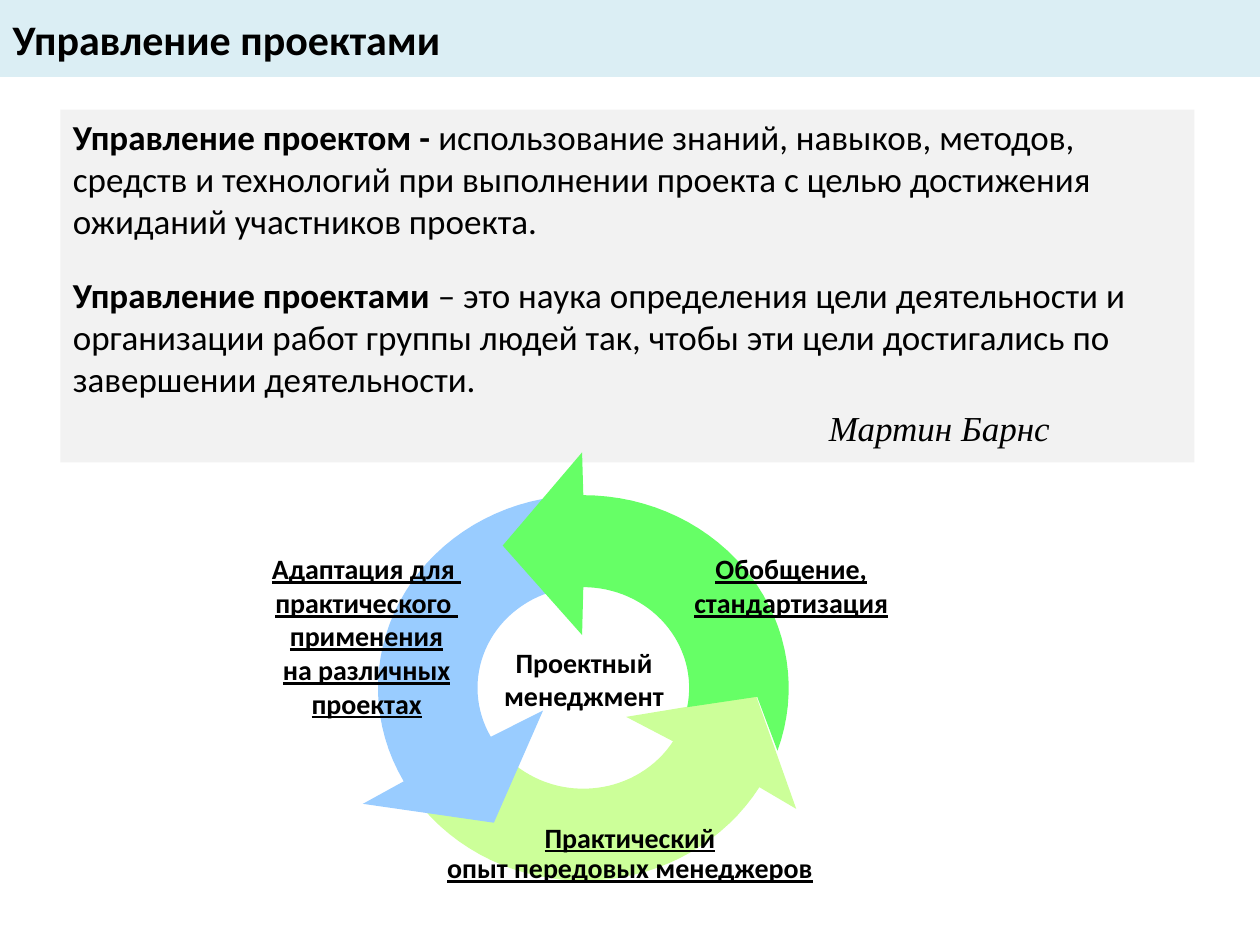
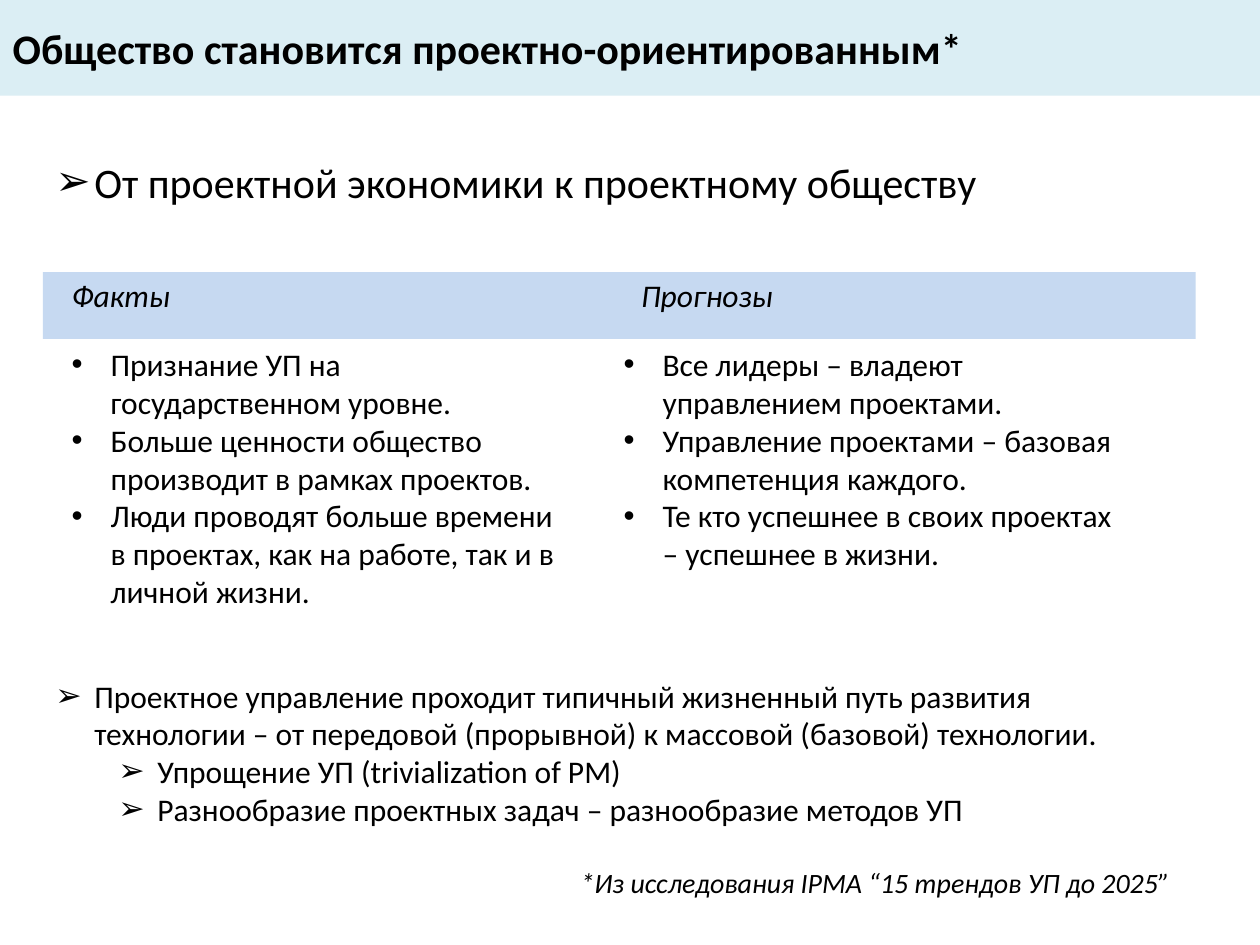
from math import cos, radians, sin

from lxml import etree
from pptx import Presentation
from pptx.dml.color import RGBColor
from pptx.enum.shapes import MSO_SHAPE
from pptx.enum.text import MSO_ANCHOR, MSO_AUTO_SIZE, PP_ALIGN
from pptx.oxml.ns import qn
from pptx.util import Inches, Pt

RECT = MSO_SHAPE.RECTANGLE
LEFT, CENTER = PP_ALIGN.LEFT, PP_ALIGN.CENTER
TOP, MIDDLE = MSO_ANCHOR.TOP, MSO_ANCHOR.MIDDLE
NO_FIT = MSO_AUTO_SIZE.NONE

FONT, QUOTE_FONT = "Calibri", "Times New Roman"
COLORS = {
    "text": "000000", "band": "DBEEF4", "panel": "F2F2F2", "header": "C6D9F1",
    "light": "CCFF99", "blue": "99CCFF", "green": "66FF66",
}

DEFINITIONS = [
    ("Управление проектом - ",
     "использование знаний, навыков, методов, средств и технологий при выполнении "
     "проекта с целью достижения ожиданий участников проекта."),
    ("Управление проектами ",
     "– это наука определения цели деятельности и организации работ группы людей так, "
     "чтобы эти цели достигались по завершении деятельности."),
]
AUTHOR = "Мартин Барнс"

RING_CENTER = (4.63, 5.46)
OUTER, INNER = (1.63, 1.53), (0.84, 0.8)
RING_ARROWS = [
    {"color": "light", "outer": (141, 31), "inner": (32, 133),
     "head": [(6.32, 6.42), (6, 5.52), (4.97, 5.69)], "notch": []},
    {"color": "blue", "outer": (262, 151), "inner": (151, 254),
     "head": [(2.88, 6.38), (3.92, 6.53), (4.31, 5.64)], "notch": []},
    {"color": "green", "outer": (19, -90), "inner": (-90, 11),
     "head": [(4.62, 3.59), (3.99, 4.33), (4.62, 5.04)], "notch": [(6.01, 5.53)]},
]
RING_LABELS = [
    ((5.36, 4.33, 1.84, 0.68), ["Обобщение,", "стандартизация"], True, 1),
    ((3.36, 6.49, 3.28, 0.62), ["Практический", "опыт передовых менеджеров"], True, 0.9),
    ((3.86, 5.07, 1.55, 0.68), ["Проектный", "менеджмент"], False, 1),
    ((2.01, 4.33, 1.8, 1.57),
     ["Адаптация для ", "практического ", "применения", "на различных", "проектах"], True, 1),
]

THESIS = "От проектной экономики к проектному обществу"
COLUMNS = [
    {"header": "Факты", "header_at": (0.47, 2.14, 0.99, 0.4), "left": 0.47, "items": [
        "Признание УП на государственном уровне.",
        "Больше ценности общество производит в рамках проектов.",
        "Люди проводят больше времени в проектах, как на работе, так и в личной жизни."]},
    {"header": "Прогнозы", "header_at": (4.99, 2.14, 1.26, 0.4), "left": 4.85, "items": [
        "Все лидеры – владеют управлением проектами.",
        "Управление проектами – базовая компетенция каждого.",
        "Те кто успешнее в своих проектах – успешнее в жизни."]},
]
CONCLUSIONS = [
    ("Проектное управление проходит типичный жизненный путь развития технологии – "
     "от передовой (прорывной) к массовой (базовой) технологии.", 0),
    ("Упрощение УП (trivialization of PM)", 1),
    ("Разнообразие проектных задач – разнообразие методов УП", 1),
]
SOURCE = "*Из исследования IPMA “15 трендов УП до 2025”"


def rgb(name):
    return RGBColor.from_string(COLORS[name])


def box(at):
    return [Inches(v) for v in at]


def paint(sp, color):
    sp.shadow.inherit = False
    sp.fill.solid()
    sp.fill.fore_color.rgb = rgb(color)
    sp.line.fill.background()


def add_run(p, text, size, bold=False, italic=False, underline=False, font=FONT):
    r = p.add_run()
    r.text = text
    f = r.font
    f.name, f.size, f.bold, f.italic, f.underline = font, Pt(size), bold, italic, underline
    f.color.rgb = rgb("text")


def paragraphs(tf, count):
    return [tf.paragraphs[0]] + [tf.add_paragraph() for _ in range(count - 1)]


def set_indent(p, margin, hanging=0):
    pPr = p._p.get_or_add_pPr()
    pPr.set("marL", str(Inches(margin)))
    pPr.set("indent", str(-Inches(hanging)))
    return pPr


def add_text(s, at, wrap=True):
    tf = s.shapes.add_textbox(*box(at)).text_frame
    tf.word_wrap = wrap
    return tf


def add_bullets(s, at, items, size, mark):
    tf = add_text(s, at)
    for p, (text, level) in zip(paragraphs(tf, len(items)), items):
        p.level = level
        pPr = set_indent(p, 0.31 + 0.5 * level, 0.31)
        etree.SubElement(pPr, qn("a:buFont")).set("typeface", "Arial")
        etree.SubElement(pPr, qn("a:buChar")).set("char", mark)
        add_run(p, text, size)


def add_titled_slide(prs, text, height):
    s = prs.slides.add_slide(prs.slide_layouts[5])
    title = s.shapes.title
    title.left, title.top, title.width, title.height = box((0, 0, 10, height))
    title.fill.solid()
    title.fill.fore_color.rgb = rgb("band")
    tf = title.text_frame
    tf.auto_size, tf.vertical_anchor = NO_FIT, MIDDLE
    p = tf.paragraphs[0]
    p.alignment = LEFT
    add_run(p, text, 24, bold=True)
    return s


def arc(radii, angles, steps=32):
    start, end = angles
    turns = [radians(start + (end - start) * i / steps) for i in range(steps + 1)]
    (cx, cy), (rx, ry) = RING_CENTER, radii
    return [(cx + rx * cos(t), cy + ry * sin(t)) for t in turns]


def add_ring_arrow(s, arrow):
    points = (arc(OUTER, arrow["outer"]) + arrow["head"]
              + arc(INNER, arrow["inner"]) + arrow["notch"])
    outline = [(Inches(x), Inches(y)) for x, y in points]
    fb = s.shapes.build_freeform(*outline[0])
    fb.add_line_segments(outline[1:], close=True)
    paint(fb.convert_to_shape(), arrow["color"])


def build_management(prs):
    s = add_titled_slide(prs, "Управление проектами", 0.61)
    panel = s.shapes.add_shape(RECT, *box((0.48, 0.87, 9, 2.8)))
    paint(panel, "panel")
    tf = panel.text_frame
    tf.word_wrap, tf.vertical_anchor = True, TOP
    *definitions, author = paragraphs(tf, len(DEFINITIONS) + 1)
    for p, (term, meaning) in zip(definitions, DEFINITIONS):
        p.alignment = LEFT
        add_run(p, term, 20, bold=True)
        add_run(p, meaning, 20)
    definitions[1].space_before = Pt(18)
    author.alignment, author.space_before = LEFT, Pt(4)
    set_indent(author, 6)
    add_run(author, AUTHOR, 20, italic=True, font=QUOTE_FONT)

    for arrow in RING_ARROWS:
        add_ring_arrow(s, arrow)
    for at, lines, underline, spacing in RING_LABELS:
        tf = add_text(s, at, wrap=False)
        for p, line in zip(paragraphs(tf, len(lines)), lines):
            p.alignment, p.line_spacing = CENTER, spacing
            add_run(p, line, 16, bold=True, underline=underline)


def build_society(prs):
    s = add_titled_slide(prs, "Общество становится проектно-ориентированным*", 0.76)
    add_bullets(s, (0.34, 1.19, 8.72, 0.5), [(THESIS, 0)], 24, "➢")
    add_bullets(s, (0.34, 5.32, 9.02, 1.31), CONCLUSIONS, 18, "➢")
    paint(s.shapes.add_shape(RECT, *box((0.34, 2.16, 9.15, 0.53))), "header")
    for column in COLUMNS:
        tf = add_text(s, column["header_at"], wrap=False)
        add_run(tf.paragraphs[0], column["header"], 18, italic=True)
        items = [(item, 0) for item in column["items"]]
        add_bullets(s, (column["left"], 2.69, 4.09, 2.22), items, 18, "•")
    tf = add_text(s, (4.51, 6.82, 4.94, 0.37), wrap=False)
    add_run(tf.paragraphs[0], SOURCE, 16, italic=True)


def main():
    prs = Presentation()
    prs.slide_width, prs.slide_height = Inches(10), Inches(7.5)
    build_management(prs)
    build_society(prs)
    prs.save("out.pptx")


if __name__ == "__main__":
    main()
